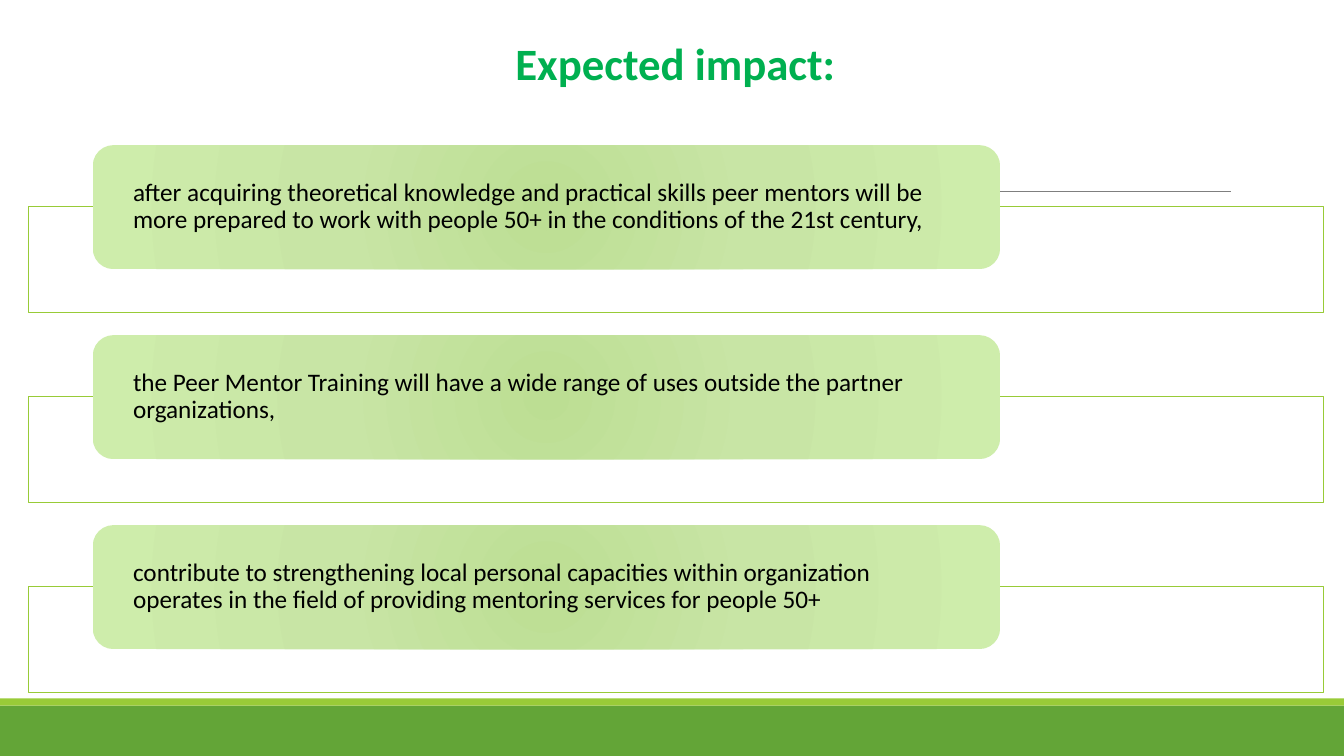
import pptx
import pptx.util
import pptx.dml.color
import pptx.enum.shapes
import pptx.enum.text
import pptx.oxml
import pptx.oxml.ns
import lxml.etree

Inches = pptx.util.Inches
SHAPES = pptx.enum.shapes.MSO_SHAPE
ANCHOR = pptx.enum.text.MSO_ANCHOR
ALIGN = pptx.enum.text.PP_ALIGN

COLORS = {
    "footer": "63A537", "stripe": "99CB38", "rule": "7F7F7F",
    "title": "00B050", "text": "000000", "frame": "98CB37", "white": "FFFFFF",
    "card_center": "BCDE93", "card_middle": "C8E5A5", "card_edge": "CEEDAB",
}
CARD_STOPS = [(0, "card_center"), (45, "card_middle"), (100, "card_edge")]

IMPACTS = [
    "after acquiring theoretical knowledge and practical skills peer mentors will be "
    "more prepared to work with people 50+ in the conditions of the 21st century,",
    "the Peer Mentor Training will have a wide range of uses outside the partner "
    "organizations,",
    "contribute to strengthening local personal capacities within organization "
    "operates in the field of providing mentoring services for people 50+",
]


class ImpactSlide:
    font = "Calibri"

    def __init__(self, deck):
        self.slide = deck.slides.add_slide(deck.slide_layouts[5])

    def color(self, name):
        return pptx.dml.color.RGBColor.from_string(COLORS[name])

    def add_text(self, frame, text, size, color, align, spacing, anchor, bold=False):
        frame.word_wrap = True
        frame.auto_size = pptx.enum.text.MSO_AUTO_SIZE.NONE
        frame.vertical_anchor = anchor
        paragraph = frame.paragraphs[0]
        paragraph.alignment = align
        paragraph.line_spacing = spacing
        run = paragraph.add_run()
        run.text = text
        run.font.name = self.font
        run.font.size = pptx.util.Pt(size)
        run.font.bold = bold
        run.font.color.rgb = self.color(color)

    def title(self, text, left, top, width, height):
        title = self.slide.shapes.title
        title.left, title.top = Inches(left), Inches(top)
        title.width, title.height = Inches(width), Inches(height)
        self.add_text(title.text_frame, text, 32, "title", ALIGN.CENTER, 0.85,
                      ANCHOR.BOTTOM, bold=True)

    def box(self, left, top, width, height, fill, line=None, kind=SHAPES.RECTANGLE):
        box = self.slide.shapes.add_shape(
            kind, Inches(left), Inches(top), Inches(width), Inches(height))
        box.shadow.inherit = False
        box.fill.solid()
        box.fill.fore_color.rgb = self.color(fill)
        if line:
            box.line.color.rgb = self.color(line)
            box.line.width = pptx.util.Pt(1)
        else:
            box.line.fill.background()
        return box

    def frame(self, left, top, width, height):
        frame = self.box(left, top, width, height, "white", "frame")
        # 90% opaque fill
        tint = frame._element.spPr.find(pptx.oxml.ns.qn("a:solidFill"))[0]
        lxml.etree.SubElement(tint, pptx.oxml.ns.qn("a:alpha"), val="90000")

    def card(self, text, left, top, width, height):
        card = self.box(left, top, width, height, "card_edge",
                        kind=SHAPES.ROUNDED_RECTANGLE)
        card.adjustments[0] = 0.167
        # Radial gradient from the centre outwards
        stops = "".join(
            f'<a:gs pos="{percent * 1000}"><a:srgbClr val="{COLORS[name]}"/></a:gs>'
            for percent, name in CARD_STOPS)
        gradient = pptx.oxml.parse_xml(
            f'<a:gradFill {pptx.oxml.ns.nsdecls("a")} rotWithShape="1">'
            f'<a:gsLst>{stops}</a:gsLst><a:path path="circle">'
            '<a:fillToRect l="50000" t="50000" r="50000" b="50000"/>'
            '</a:path></a:gradFill>')
        properties = card._element.spPr
        properties.replace(properties.find(pptx.oxml.ns.qn("a:solidFill")), gradient)

        body = card.text_frame
        body.margin_left = body.margin_right = Inches(0.34)
        body.margin_top = body.margin_bottom = 0
        self.add_text(body, text, 18, "text", ALIGN.LEFT, 0.9, ANCHOR.MIDDLE)

    def rule(self, left, right, y):
        rule = self.slide.shapes.add_connector(
            pptx.enum.shapes.MSO_CONNECTOR.STRAIGHT,
            Inches(left), Inches(y), Inches(right), Inches(y))
        rule.line.color.rgb = self.color("rule")
        rule.line.width = pptx.util.Pt(0.75)
        lxml.etree.SubElement(rule._element.spPr, pptx.oxml.ns.qn("a:effectLst"))


def main():
    deck = pptx.Presentation()
    deck.slide_width, deck.slide_height = Inches(13.33), Inches(7.5)
    page = ImpactSlide(deck)

    # Footer band and the rule under the heading
    page.box(0, 7, 13.33, 0.5, "footer")
    page.box(0, 6.93, 13.33, 0.07, "stripe")
    page.rule(1.31, 12.21, 1.9)

    page.title("Expected impact:", 1.2, 0.31, 11, 0.63)

    # One framed card per impact, evenly spaced
    pitch = 3.77 / 2
    for row, impact in enumerate(IMPACTS):
        top = 1.44 + row * pitch
        page.frame(0.28, top + 0.61, 12.85, 1.05)
        page.card(impact, 0.92, top, 9, 1.23)

    deck.save("out.pptx")


if __name__ == "__main__":
    main()
